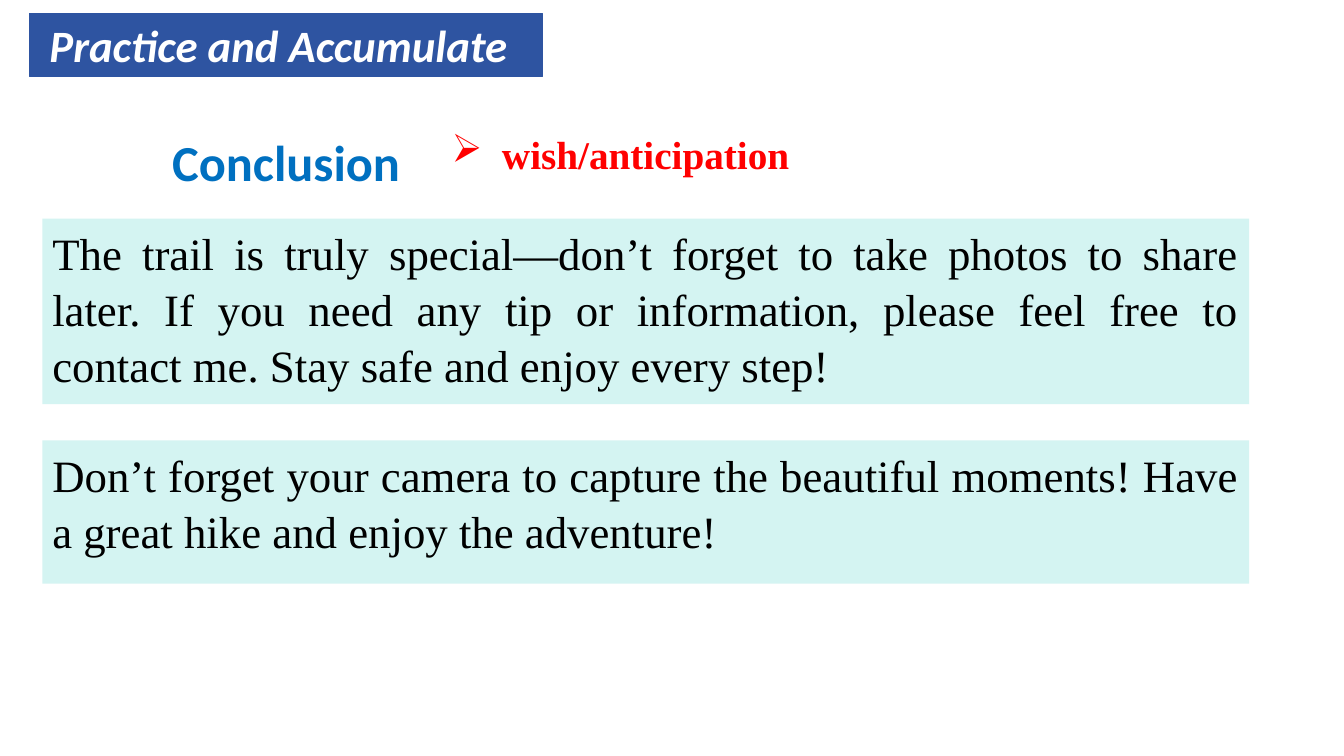
from dataclasses import dataclass
from typing import Optional

from lxml import etree
from pptx import Presentation
from pptx.dml.color import RGBColor
from pptx.enum.shapes import MSO_SHAPE
from pptx.enum.text import MSO_ANCHOR, PP_ALIGN
from pptx.oxml.ns import qn
from pptx.util import Inches, Pt

RECTANGLE = MSO_SHAPE.RECTANGLE
TOP = MSO_ANCHOR.TOP
LEFT, JUSTIFY = PP_ALIGN.LEFT, PP_ALIGN.JUSTIFY

NAVY = RGBColor(0x2E, 0x54, 0xA1)
BLUE = RGBColor(0x00, 0x70, 0xC0)
MINT = RGBColor(0xD4, 0xF4, 0xF2)
RED = RGBColor(0xFF, 0x00, 0x00)
BLACK = RGBColor(0x00, 0x00, 0x00)
WHITE = RGBColor(0xFF, 0xFF, 0xFF)

SANS, SERIF = "Calibri", "Times New Roman"
SLIDE_WIDTH, SLIDE_HEIGHT = Inches(13.33), Inches(7.5)
BULLET_INDENT = Inches(0.5)


@dataclass(frozen=True)
class Area:
    """Place and size in percent of the slide's width and height."""
    left: float
    top: float
    width: float
    height: float

    def lengths(self) -> tuple[int, int, int, int]:
        return (int(SLIDE_WIDTH * self.left / 100), int(SLIDE_HEIGHT * self.top / 100),
                int(SLIDE_WIDTH * self.width / 100), int(SLIDE_HEIGHT * self.height / 100))


@dataclass(frozen=True)
class Style:
    font: str
    size: int
    color: RGBColor
    bold: bool = False
    italic: bool = False
    alignment: PP_ALIGN = LEFT
    line_spacing: float = 1.0


@dataclass(frozen=True)
class Block:
    text: str
    area: Area
    style: Style
    fill: Optional[RGBColor] = None
    line: Optional[RGBColor] = None
    inset: float = 0.1
    bullet: Optional[str] = None


BANNER = Style(SANS, 32, WHITE, bold=True, italic=True)
HEADING = Style(SANS, 36, BLUE, bold=True)
POINT = Style(SERIF, 28, RED, bold=True)
BODY = Style(SERIF, 32, BLACK, alignment=JUSTIFY, line_spacing=1.04)

BLOCKS = (
    Block("Practice and Accumulate", Area(2.18, 1.73, 38.18, 8.4), BANNER,
          fill=NAVY, line=NAVY, inset=0.2),
    Block("Conclusion", Area(12.08, 16.67, 19.73, 7.73), HEADING),
    Block("The trail is truly special—don’t forget to take photos to share later. "
          "If you need any tip or information, please feel free to contact me. "
          "Stay safe and enjoy every step!",
          Area(3.15, 28.93, 89.8, 24.53), BODY, fill=MINT),
    Block("Don’t forget your camera to capture the beautiful moments! "
          "Have a great hike and enjoy the adventure!",
          Area(3.15, 58.27, 89.8, 18.93), BODY, fill=MINT),
    Block("wish/anticipation", Area(32.86, 16.53, 30.46, 7.6), POINT, bullet="➢"),
)


def add_bullet(paragraph, character: str) -> None:
    properties = paragraph._p.get_or_add_pPr()
    properties.set("marL", str(BULLET_INDENT))
    properties.set("indent", str(-BULLET_INDENT))
    etree.SubElement(properties, qn("a:buChar")).set("char", character)


def add_panel(slide, block: Block):
    shape = slide.shapes.add_shape(RECTANGLE, *block.area.lengths())
    shape.shadow.inherit = False
    shape.fill.solid()
    shape.fill.fore_color.rgb = block.fill
    if block.line is None:
        shape.line.fill.background()
    else:
        shape.line.color.rgb = block.line
        shape.line.width = Pt(0.75)
    return shape


def write_text(shape, block: Block) -> None:
    frame, style = shape.text_frame, block.style
    frame.word_wrap = True
    frame.vertical_anchor = TOP
    frame.margin_left = Inches(block.inset)
    paragraph = frame.paragraphs[0]
    paragraph.alignment = style.alignment
    paragraph.line_spacing = style.line_spacing
    if block.bullet:
        add_bullet(paragraph, block.bullet)
    run = paragraph.add_run()
    run.text = block.text
    run.font.name = style.font
    run.font.size = Pt(style.size)
    run.font.bold = style.bold
    run.font.italic = style.italic
    run.font.color.rgb = style.color


def add_block(slide, block: Block) -> None:
    if block.fill is None:
        shape = slide.shapes.add_textbox(*block.area.lengths())
    else:
        shape = add_panel(slide, block)
    write_text(shape, block)


def main() -> None:
    presentation = Presentation()
    presentation.slide_width = SLIDE_WIDTH
    presentation.slide_height = SLIDE_HEIGHT
    slide = presentation.slides.add_slide(presentation.slide_layouts[6])
    # Banner, heading, sample endings and bullet point
    for block in BLOCKS:
        add_block(slide, block)
    presentation.save("out.pptx")


if __name__ == "__main__":
    main()
